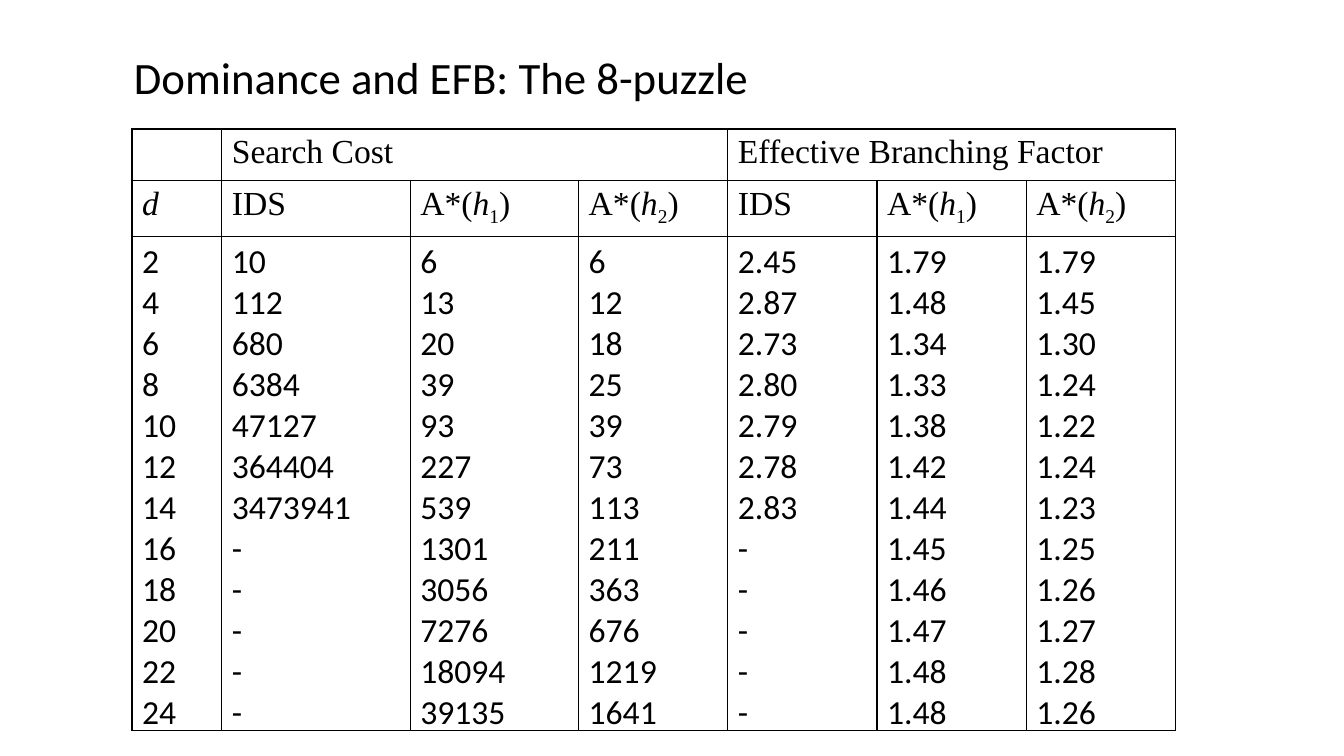
from lxml import etree
from pptx import Presentation
from pptx.dml.color import RGBColor
from pptx.enum.text import MSO_AUTO_SIZE
from pptx.oxml.ns import qn
from pptx.util import Inches, Pt

FIT_SHAPE = MSO_AUTO_SIZE.SHAPE_TO_FIT_TEXT
SANS, SERIF = "Calibri", "Times New Roman"
BLACK, WHITE = "000000", "FFFFFF"


def color(value):
    return RGBColor.from_string(value)


def style(font, name, size=24):
    font.name, font.size = name, Pt(size)
    font.color.rgb = color(BLACK)


prs = Presentation()
prs.slide_width, prs.slide_height = Inches(13.33), Inches(7.5)
s = prs.slides.add_slide(prs.slide_layouts[6])

# Title
title = s.shapes.add_textbox(Inches(1.23), Inches(0.44), Inches(6.36), Inches(0.64))
tf = title.text_frame
tf.word_wrap = False
tf.auto_size = FIT_SHAPE
tf.text = "Dominance and EFB: The 8-puzzle"
style(tf.paragraphs[0].runs[0].font, SANS, 32)

# Table content: a header cell is a list of (text, kind) runs
groups = {1: "Search Cost", 4: "Effective Branching Factor"}
ids = [("IDS", "")]
h1, h2 = [[("A*(", ""), ("h", "italic"), (n, "sub"), (")", "")] for n in "12"]
headers = [[("d", "italic")], ids, h1, h2, ids, h1, h2]
results = [
    ("2", "10", "6", "6", "2.45", "1.79", "1.79"),
    ("4", "112", "13", "12", "2.87", "1.48", "1.45"),
    ("6", "680", "20", "18", "2.73", "1.34", "1.30"),
    ("8", "6384", "39", "25", "2.80", "1.33", "1.24"),
    ("10", "47127", "93", "39", "2.79", "1.38", "1.22"),
    ("12", "364404", "227", "73", "2.78", "1.42", "1.24"),
    ("14", "3473941", "539", "113", "2.83", "1.44", "1.23"),
    ("16", "-", "1301", "211", "-", "1.45", "1.25"),
    ("18", "-", "3056", "363", "-", "1.46", "1.26"),
    ("20", "-", "7276", "676", "-", "1.47", "1.27"),
    ("22", "-", "18094", "1219", "-", "1.48", "1.28"),
    ("24", "-", "39135", "1641", "-", "1.48", "1.26"),
]
widths = [0.89, 1.87, 1.67] + [1.48] * 4
heights = [0.51, 0.56, 4.9]

# Table grid
table = s.shapes.add_table(len(heights), len(widths), Inches(1.31), Inches(1.28),
                           Inches(10.35), Inches(5.9)).table
table.first_row = table.horz_banding = False
for column, width in zip(table.columns, widths):
    column.width = Inches(width)
for row, height in zip(table.rows, heights):
    row.height = Inches(height)

# Borders and fill
for cell in table.iter_cells():
    tcPr = cell._tc.get_or_add_tcPr()
    for side in ("a:lnL", "a:lnR", "a:lnT", "a:lnB"):
        ln = etree.SubElement(tcPr, qn(side), w=str(Pt(1)))
        line_fill = etree.SubElement(ln, qn("a:solidFill"))
        etree.SubElement(line_fill, qn("a:srgbClr"), val=BLACK)
    cell.fill.solid()
    cell.fill.fore_color.rgb = color(WHITE)

# Group headings
style(table.cell(0, 0).text_frame.paragraphs[0].font, SANS)
for col, heading in groups.items():
    cell = table.cell(0, col)
    cell.merge(table.cell(0, col + 2))
    cell.text_frame.text = heading
    style(cell.text_frame.paragraphs[0].runs[0].font, SERIF)

# Column headings
for col, header in enumerate(headers):
    p = table.cell(1, col).text_frame.paragraphs[0]
    for text, kind in header:
        r = p.add_run()
        r.text = text
        style(r.font, SERIF)
        if kind == "italic":
            r.font.italic = True
        elif kind == "sub":
            r._r.get_or_add_rPr().set("baseline", "-25000")

# Results: one cell per column, one paragraph per depth
for col, values in enumerate(zip(*results)):
    cell = table.cell(2, col)
    cell.margin_bottom = 0
    cell.text_frame.text = "\n".join(values)
    for p in cell.text_frame.paragraphs:
        style(p.runs[0].font, SANS)

prs.save("out.pptx")
